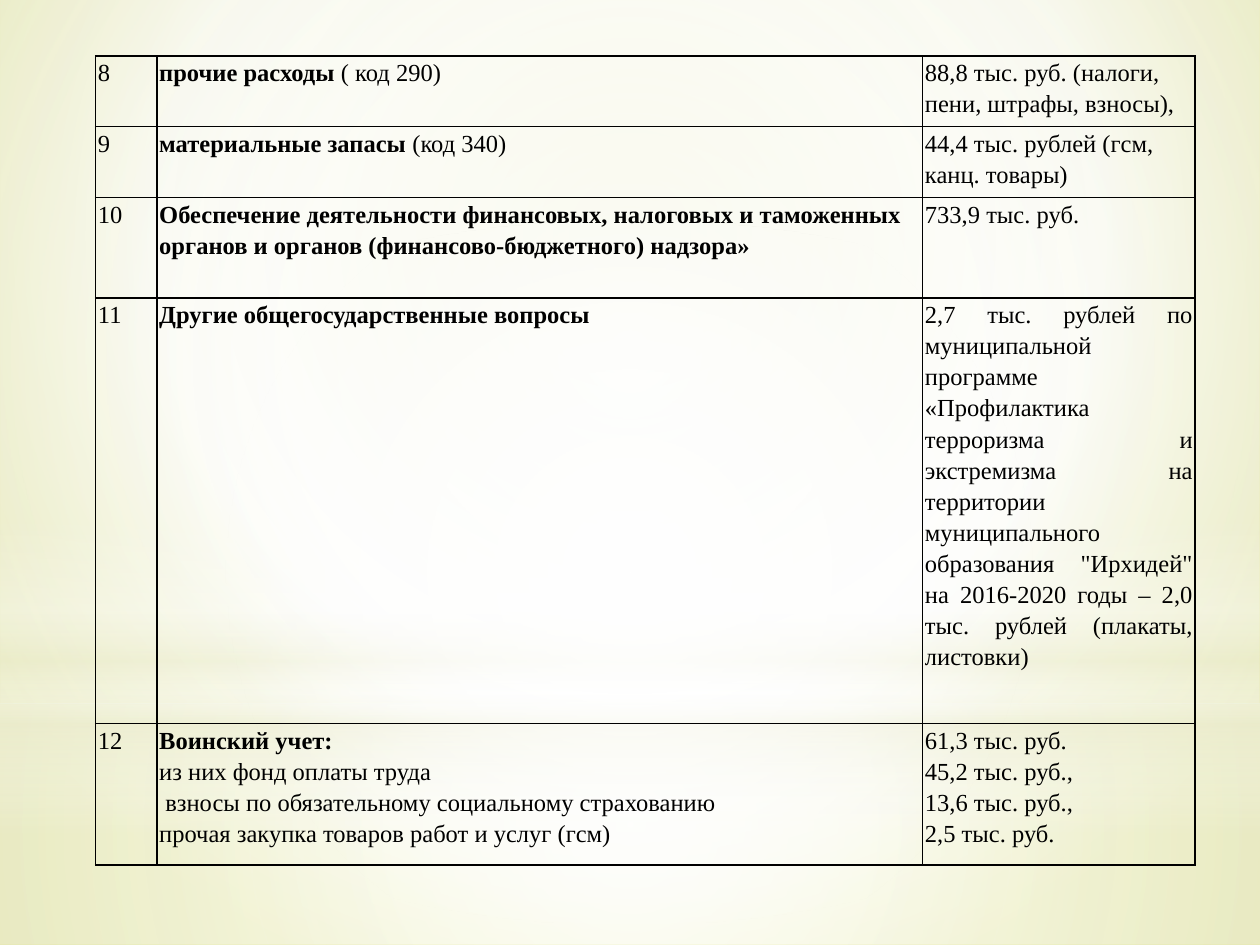
from lxml.etree import SubElement
from pptx import Presentation
from pptx.dml.color import RGBColor
from pptx.enum.shapes import MSO_SHAPE as Shape
from pptx.enum.text import PP_ALIGN as Align
from pptx.oxml.ns import qn
from pptx.util import Pt

COLORS = {"text": "000000", "border": "000000", "white": "FFFFFF",
          "haze": "ECEDD1", "cream": "E9EBC1", "olive": "DEE285"}
FONT = "Times New Roman"

# Content: number, item as (text, bold) paragraphs of runs, amount paragraphs
ROWS = [
    ("8", [[("прочие расходы ", True), ("( код 290)", False)]],
     ["88,8 тыс. руб. (налоги, пени, штрафы, взносы),"]),
    ("9", [[("материальные запасы ", True), ("(код 340)", False)]],
     ["44,4 тыс. рублей (гсм, канц. товары)"]),
    ("10", [[("Обеспечение деятельности финансовых, налоговых и таможенных органов "
              "и органов (финансово-бюджетного) надзора»", True)]],
     ["733,9 тыс. руб."]),
    ("11", [[("Другие общегосударственные вопросы", True)]],
     ["2,7 тыс. рублей по муниципальной программе «Профилактика терроризма и "
      "экстремизма на территории муниципального образования \"Ирхидей\" на "
      "2016-2020 годы – 2,0 тыс. рублей (плакаты, листовки)"]),
    ("12", [[("Воинский учет:", True)],
            [("из них фонд оплаты труда", False)],
            [(" взносы по обязательному социальному страхованию", False)],
            [("прочая закупка товаров работ и услуг (гсм)", False)]],
     ["61,3 тыс. руб.", "45,2 тыс. руб.,", "13,6 тыс. руб.,", "2,5 тыс. руб."]),
]
COLUMN_WIDTHS = [35, 437.6, 155.8]
ROW_HEIGHTS = [40.4, 40.4, 57.4, 243.2, 81]
JUSTIFIED = {"11"}

CENTER = (50, 50, 50, 50)
# Backdrop: shape, top, height, (position, colour, opacity) stops, circle focus
BACKDROP = [
    (Shape.RECTANGLE, 401.8, 138.2,
     [(0, "white", 91), (37, "white", 76), (100, "haze", 79)], CENTER),
    (Shape.RECTANGLE, 0, 401.8,
     [(0, "white", 89), (48, "white", 62), (100, "haze", 79)], CENTER),
    (Shape.RECTANGLE, 296.6, 180,
     [(0, "white", 0), (29, "white", 30), (45, "haze", 40), (55, "white", 26),
      (65, "haze", 60), (100, "white", 0)], None),
    (Shape.OVAL, 126, 401.8, [(0, "white", 100), (56, "white", 0)], CENTER),
]


def paint_gradient(fill, owner, stops, focus):
    """Fill with a circular gradient, or a vertical one without a focus."""
    fill.gradient()
    gradient = next(owner.iter(qn("a:gradFill")))
    gradient.clear()
    stop_list = SubElement(gradient, qn("a:gsLst"))
    for position, color, opacity in stops:
        stop = SubElement(stop_list, qn("a:gs"), pos=str(position * 1000))
        rgb = SubElement(stop, qn("a:srgbClr"), val=COLORS[color])
        SubElement(rgb, qn("a:alpha"), val=str(opacity * 1000))
    if focus:
        circle = SubElement(gradient, qn("a:path"), path="circle")
        sides = {side: str(share * 1000) for side, share in zip("ltrb", focus)}
        SubElement(circle, qn("a:fillToRect"), **sides)
    else:
        SubElement(gradient, qn("a:lin"), ang="5400000", scaled="0")


def write(frame, paragraphs, size=14, align=Align.LEFT, spacing=1.15):
    """Write paragraphs, each a list of (text, bold) runs."""
    for index, runs in enumerate(paragraphs):
        paragraph = frame.add_paragraph() if index else frame.paragraphs[0]
        paragraph.alignment = align
        paragraph.line_spacing = spacing
        for text, bold in runs:
            run = paragraph.add_run()
            run.text = text
            run.font.name = FONT
            run.font.size = Pt(size)
            run.font.bold = bold
            run.font.color.rgb = RGBColor.from_string(COLORS["text"])


def style_cell(cell):
    cell.margin_left = cell.margin_right = Pt(1.4)
    cell.margin_top = cell.margin_bottom = 0
    properties = cell._tc.get_or_add_tcPr()
    for side in ("lnL", "lnR", "lnT", "lnB"):
        border = SubElement(properties, qn(f"a:{side}"), w=str(Pt(1)))
        solid = SubElement(border, qn("a:solidFill"))
        SubElement(solid, qn("a:srgbClr"), val=COLORS["border"])
    cell.fill.background()


def main():
    deck = Presentation()
    deck.slide_width, deck.slide_height = Pt(720), Pt(540)
    slide = deck.slides.add_slide(deck.slide_layouts[6])

    # Background and soft light layers
    paint_gradient(slide.background.fill, slide._element,
                   [(0, "cream", 100), (60, "white", 100), (100, "olive", 100)],
                   (20, 10, 20, 60))
    for kind, top, height, stops, focus in BACKDROP:
        layer = slide.shapes.add_shape(kind, 0, Pt(top), deck.slide_width, Pt(height))
        layer.shadow.inherit = False
        layer.line.fill.background()
        paint_gradient(layer.fill, layer._element, stops, focus)

    # Expenses table
    expenses = slide.shapes.add_table(
        len(ROWS), len(COLUMN_WIDTHS), Pt(54.6), Pt(32),
        Pt(sum(COLUMN_WIDTHS)), Pt(sum(ROW_HEIGHTS))).table
    expenses.first_row = expenses.horz_banding = False
    for column, width in zip(expenses.columns, COLUMN_WIDTHS):
        column.width = Pt(width)
    for row, height, (number, item, amounts) in zip(expenses.rows, ROW_HEIGHTS, ROWS):
        row.height = Pt(height)
        amount_align = Align.JUSTIFY if number in JUSTIFIED else Align.LEFT
        contents = [([[(number, False)]], Align.LEFT), (item, Align.LEFT),
                    ([[(amount, False)] for amount in amounts], amount_align)]
        for cell, (paragraphs, align) in zip(row.cells, contents):
            style_cell(cell)
            write(cell.text_frame, paragraphs, align=align)

    deck.save("out.pptx")


if __name__ == "__main__":
    main()
